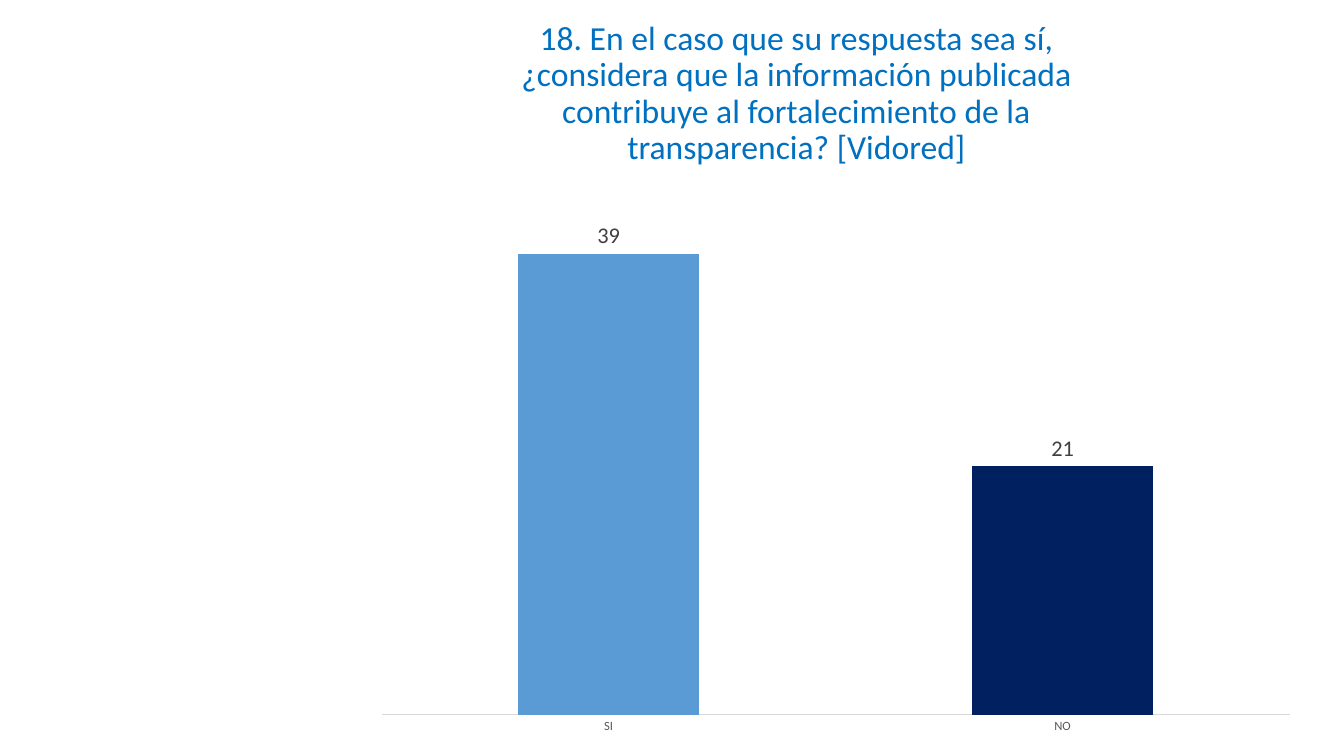
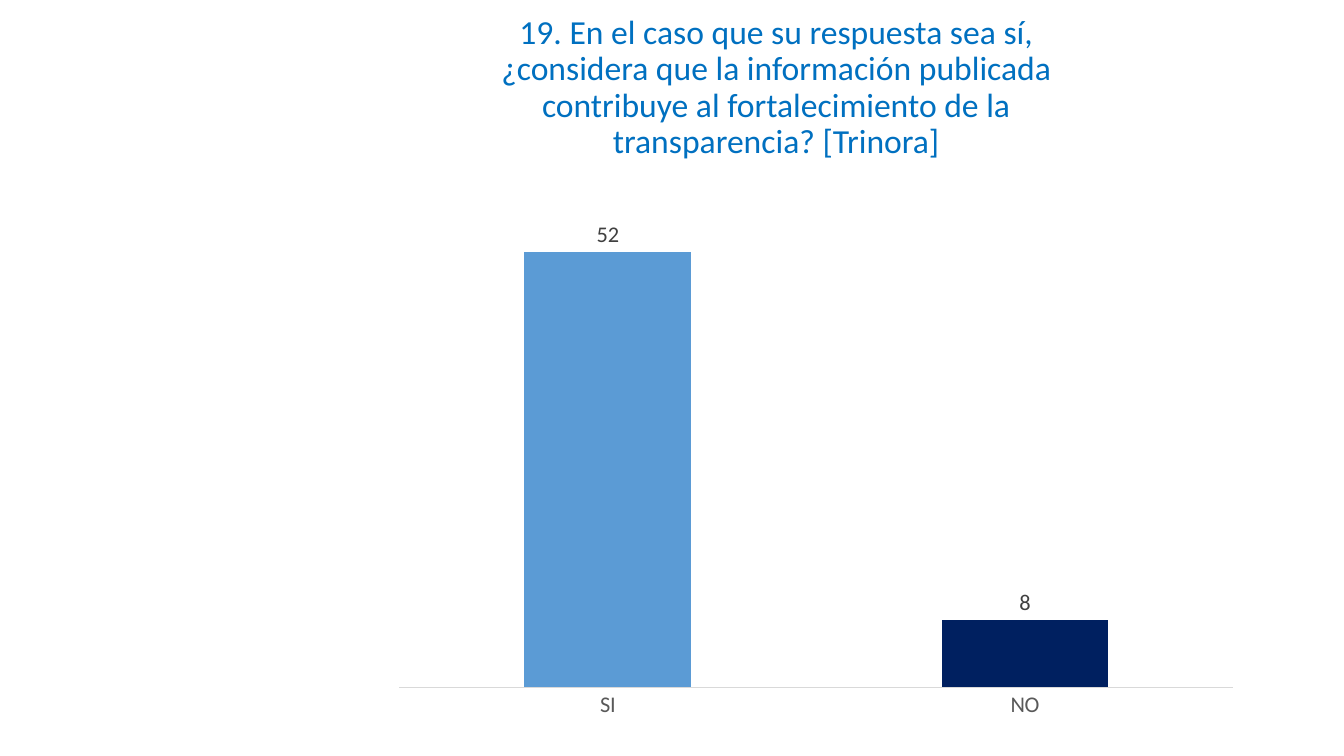
from dataclasses import dataclass

from pptx import Presentation
from pptx.chart import data as chart_data
from pptx.dml.color import RGBColor
from pptx.enum import chart as charts, text
from pptx.slide import Slide
from pptx.util import Pt

# Shared style
FONT = "Calibri"
TITLE_BLUE = RGBColor(0x00, 0x70, 0xC0)
LIGHT_BLUE = RGBColor(0x5B, 0x9B, 0xD5)
NAVY = RGBColor(0x00, 0x20, 0x60)
AXIS_GREY = RGBColor(0xD9, 0xD9, 0xD9)
TICK_GREY = RGBColor(0x59, 0x59, 0x59)
LABEL_GREY = RGBColor(0x40, 0x40, 0x40)
TITLE_WIDTH, TITLE_HEIGHT = 485.3, 88.6
ANSWERS = ("SI", "NO")
BAR_COLORS = (LIGHT_BLUE, NAVY)
QUESTION = (
    "{number}. En el caso que su respuesta sea sí, ¿considera que la información "
    "publicada contribuye al fortalecimiento de la transparencia? [{network}]"
)


@dataclass(frozen=True)
class Box:
    left: float
    top: float
    width: float
    height: float

    def lengths(self) -> tuple[Pt, ...]:
        return tuple(Pt(v) for v in (self.left, self.top, self.width, self.height))


@dataclass(frozen=True)
class Question:
    number: int
    network: str
    counts: tuple[int, int]
    axis_max: int
    tick_size: int
    title_box: Box
    chart_box: Box


QUESTIONS = (
    Question(18, "Vidored", (39, 21), 45, 9,
             Box(326.2, 23, TITLE_WIDTH, TITLE_HEIGHT),
             Box(259.2, 122.4, 675.4, 409.7)),
    Question(19, "Trinora", (52, 8), 60, 16,
             Box(311.8, 18.7, TITLE_WIDTH, TITLE_HEIGHT),
             Box(272.9, 124.6, 620.6, 396.7)),
)


def style_font(font, size: float, color: RGBColor) -> None:
    font.name = FONT
    font.size = Pt(size)
    font.color.rgb = color
    font.bold = False


def add_title(slide: Slide, question: Question) -> None:
    tf = slide.shapes.add_textbox(*question.title_box.lengths()).text_frame
    tf.word_wrap = True
    tf.vertical_anchor = text.MSO_ANCHOR.MIDDLE
    p = tf.paragraphs[0]
    p.text = QUESTION.format(number=question.number, network=question.network)
    p.alignment = text.PP_ALIGN.CENTER
    p.line_spacing = 0.9
    style_font(p.font, 24, TITLE_BLUE)


def add_answer_chart(slide: Slide, question: Question) -> None:
    data = chart_data.CategoryChartData()
    data.categories = ANSWERS
    data.add_series("Series 1", question.counts)
    chart = slide.shapes.add_chart(
        charts.XL_CHART_TYPE.COLUMN_CLUSTERED, *question.chart_box.lengths(), data
    ).chart
    chart.has_title = False
    chart.has_legend = False
    chart.font.name = FONT
    chart.font.size = Pt(question.tick_size)

    # Axes
    answers = chart.category_axis
    answers.major_tick_mark = charts.XL_TICK_MARK.NONE
    answers.format.line.color.rgb = AXIS_GREY
    answers.format.line.width = Pt(0.75)
    style_font(answers.tick_labels.font, question.tick_size, TICK_GREY)
    counts = chart.value_axis
    counts.visible = False
    counts.has_major_gridlines = False
    counts.minimum_scale = 0
    counts.maximum_scale = question.axis_max

    # Columns and their values
    plot = chart.plots[0]
    plot.gap_width = 150
    plot.vary_by_categories = False
    series = plot.series[0]
    for i, color in enumerate(BAR_COLORS):
        fill = series.points[i].format.fill
        fill.solid()
        fill.fore_color.rgb = color
    labels = series.data_labels
    labels.show_value = True
    labels.position = charts.XL_LABEL_POSITION.OUTSIDE_END
    style_font(labels.font, 16, LABEL_GREY)


def main() -> None:
    prs = Presentation()
    prs.slide_width, prs.slide_height = Pt(960), Pt(540)
    for question in QUESTIONS:
        slide = prs.slides.add_slide(prs.slide_layouts[6])
        add_title(slide, question)
        add_answer_chart(slide, question)
    prs.save("out.pptx")


if __name__ == "__main__":
    main()
